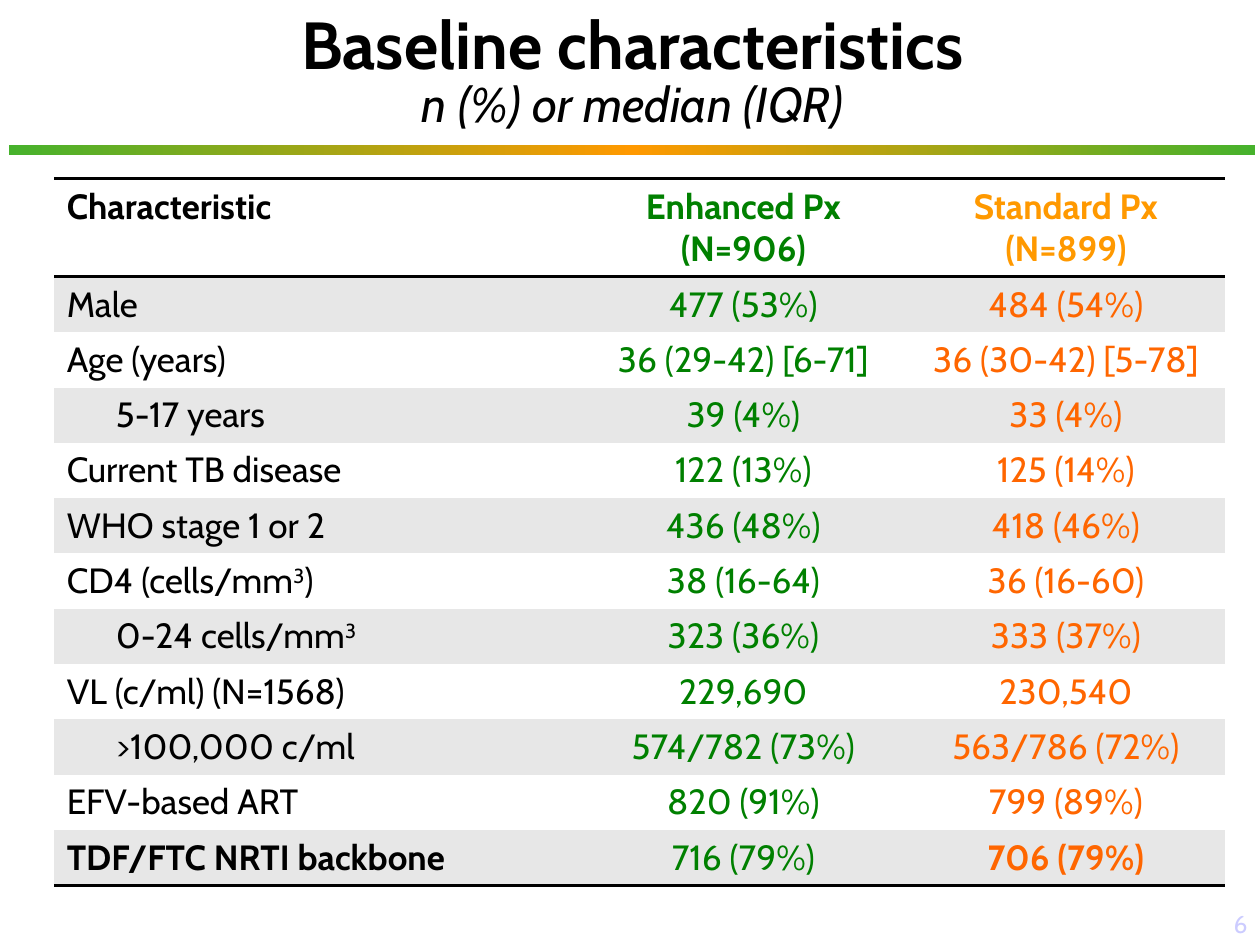
from copy import deepcopy
from lxml import etree
from pptx import Presentation
from pptx.dml.color import RGBColor
from pptx.enum.shapes import MSO_SHAPE
from pptx.enum.text import MSO_ANCHOR, MSO_AUTO_SIZE, PP_ALIGN
from pptx.oxml.ns import qn
from pptx.util import Inches, Pt

RECT = MSO_SHAPE.RECTANGLE
MID, LOW = MSO_ANCHOR.MIDDLE, MSO_ANCHOR.BOTTOM
LEFT, MIDDLE, RIGHT = PP_ALIGN.LEFT, PP_ALIGN.CENTER, PP_ALIGN.RIGHT
FIXED = MSO_AUTO_SIZE.NONE
PLAIN = "{2D5ABB26-0587-4C30-8999-92F81FD0307C}"

WIDE, HIGH = 10, 7.5
COLS, ROWS = 100, 75
BLACK, WHITE, GRAY = "000000", "FFFFFF", "E7E7E7"
GREEN, AMBER, ORANGE = "008000", "FF9900", "FF6600"
LEAF, LILAC = "46B22C", "CCCCFF"

HEAD = ("Characteristic", "Enhanced Px\n(N=906)", "Standard Px\n(N=899)")
BODY = [
    ("Male", "477 (53%)", "484 (54%)"),
    ("Age (years)", "36 (29-42) [6-71]", "36 (30-42) [5-78]"),
    ("5-17 years", "39 (4%)", "33 (4%)"),
    ("Current TB disease", "122 (13%)", "125 (14%)"),
    ("WHO stage 1 or 2", "436 (48%)", "418 (46%)"),
    ("CD4 (cells/mm^3^)", "38 (16-64)", "36 (16-60)"),
    ("0-24 cells/mm^3", "323 (36%)", "333 (37%)"),
    ("VL (c/ml) (N=1568)", "229,690", "230,540"),
    (">100,000 c/ml", "574/782 (73%)", "563/786 (72%)"),
    ("EFV-based ART", "820 (91%)", "799 (89%)"),
    ("TDF/FTC NRTI backbone", "716 (79%)", "706 (79%)"),
]
NESTED = {3, 7, 9}
STRONG = {(len(BODY), 0), (len(BODY), 2)}


def rgb(code):
    return RGBColor.from_string(code)


def col(n):
    return Inches(n * WIDE / COLS)


def row(n):
    return Inches(n * HIGH / ROWS)


class Deck:
    font = "Cabin"

    def __init__(self):
        self.prs = Presentation()
        self.prs.slide_width, self.prs.slide_height = col(COLS), row(ROWS)
        self.slide = self.prs.slides.add_slide(self.prs.slide_layouts[5])

    def area(self, x, y, w, h):
        return col(x), row(y), col(w), row(h)

    def run(self, para, text, size, color, bold=False, italic=False):
        run = para.add_run()
        run.text = text
        font = run.font
        font.name, font.size, font.bold, font.italic = self.font, Pt(size), bold, italic
        font.color.rgb = rgb(color)
        return run

    def lines(self, para, text, size, color, bold=False):
        for i, line in enumerate(text.split("\n")):
            if i:
                para.add_line_break()
            for j, part in enumerate(line.split("^")):
                run = self.run(para, part, size, color, bold)
                if j % 2:
                    run.font._element.set("baseline", "30000")

    def title(self, place, main, sub):
        box = self.slide.shapes.title
        box.left, box.top, box.width, box.height = self.area(*place)
        frame = box.text_frame
        frame.word_wrap, frame.auto_size, frame.vertical_anchor = True, FIXED, MID
        para = frame.paragraphs[0]
        para.alignment, para.line_spacing = MIDDLE, 0.85
        self.run(para, main, 38, BLACK, bold=True)
        para.add_line_break()
        self.run(para, sub, 28, BLACK, italic=True)

    def band(self, place, colors):
        bar = self.slide.shapes.add_shape(RECT, *self.area(*place))
        bar.shadow.inherit = False
        bar.line.fill.background()
        bar.fill.gradient()
        bar.fill.gradient_angle = 0
        stops = bar._element.spPr.find(".//" + qn("a:gsLst"))
        stops.append(deepcopy(stops[-1]))
        for i, (stop, color) in enumerate(zip(bar.fill.gradient_stops, colors)):
            stop.position = i / (len(colors) - 1)
            stop.color.rgb = rgb(color)

    def note(self, place, text):
        frame = self.slide.shapes.add_textbox(*self.area(*place)).text_frame
        frame.word_wrap, frame.vertical_anchor = True, LOW
        para = frame.paragraphs[0]
        para.alignment = RIGHT
        self.run(para, text, 14, LILAC)

    def edge(self, cell, sides):
        props = cell._tc.get_or_add_tcPr()
        for i, side in enumerate(sides):
            line = etree.Element(qn("a:ln" + side), w=str(Pt(2)))
            fill = etree.SubElement(line, qn("a:solidFill"))
            etree.SubElement(fill, qn("a:srgbClr"), val=BLACK)
            props.insert(i, line)

    def cell(self, cell, text, color, back, sides, bold, center, nested):
        cell.fill.solid()
        cell.fill.fore_color.rgb = rgb(back)
        para = cell.text_frame.paragraphs[0]
        para.alignment = MIDDLE if center else LEFT
        if nested:
            para._p.get_or_add_pPr().set("marL", str(col(3.9)))
        self.lines(para, text, 20, color, bold)
        self.edge(cell, sides)

    def table(self, place, widths, top, step):
        data = [HEAD] + BODY
        last = len(BODY)
        frame = self.slide.shapes.add_table(len(data), len(HEAD), *self.area(*place))
        grid = frame.table
        grid.first_row = grid.horz_banding = False
        grid._tbl.tblPr.find(qn("a:tableStyleId")).text = PLAIN
        for item, width in zip(grid.columns, widths):
            item.width = col(width)
        for r, texts in enumerate(data):
            grid.rows[r].height = row(step if r else top)
            hues = (BLACK, GREEN, ORANGE if r else AMBER)
            sides = "" if 0 < r < last else "B" if r else "TB"
            for c, text in enumerate(texts):
                self.cell(grid.cell(r, c), text, hues[c], GRAY if r % 2 else WHITE,
                          sides, r == 0 or (r, c) in STRONG, c > 0,
                          c == 0 and r in NESTED)


def main():
    deck = Deck()
    deck.band((0.7, 11.5, 98.9, 0.8), (LEAF, AMBER, LEAF))
    deck.title((9.8, 2.5, 80.8, 6.7), "Baseline characteristics", "n (%) or median (IQR)")
    deck.table((4.3, 14.2, 92.9, 55.3), (41.7, 26, 25.2), 7.7, 4.33)
    deck.note((90, 70, 10, 5), "6")
    deck.prs.save("out.pptx")


if __name__ == "__main__":
    main()
